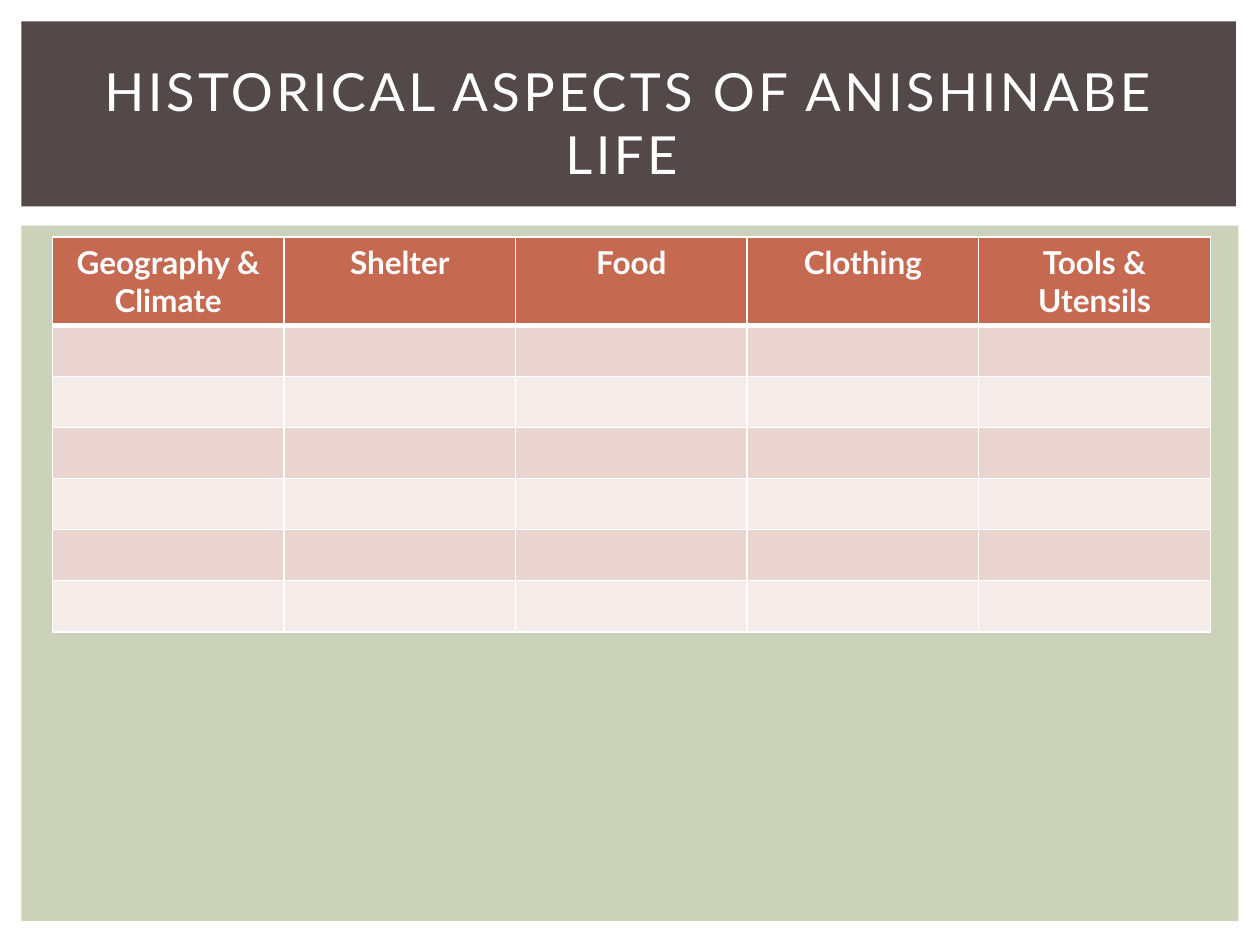
from lxml import etree
from pptx import Presentation
from pptx.dml.color import RGBColor
from pptx.enum.shapes import MSO_SHAPE
from pptx.enum.text import MSO_ANCHOR, PP_ALIGN
from pptx.oxml.ns import qn
from pptx.util import Pt

RECT = MSO_SHAPE.RECTANGLE
MIDDLE = MSO_ANCHOR.MIDDLE
CENTER = PP_ALIGN.CENTER

WHITE = RGBColor(0xFF, 0xFF, 0xFF)
BROWN = RGBColor(0x53, 0x49, 0x49)
SAGE = RGBColor(0xCC, 0xD1, 0xB9)
RUST = RGBColor(0xC6, 0x69, 0x51)
BANDS = (RGBColor(0xEA, 0xD4, 0xD0), RGBColor(0xF5, 0xEB, 0xE9))

FONT = "Lato"
TITLE = "HISTORICAL ASPECTS OF ANISHINABE LIFE "
HEADS = ("Geography & Climate", "Shelter", "Food", "Clothing",
         "Tools & Utensils")
ROWS = 6
HEAD_H, ROW_H = 50, 29.2


def add_panel(slide, box, color):
    panel = slide.shapes.add_shape(RECT, *map(Pt, box))
    panel.shadow.inherit = False
    panel.fill.solid()
    panel.fill.fore_color.rgb = color
    panel.line.fill.background()


def add_text(para, text, size):
    para.alignment = CENTER
    run = para.add_run()
    run.text = text
    run.font.name = FONT
    run.font.size = Pt(size)
    run.font.color.rgb = WHITE
    return run


def add_title(slide, box):
    title = slide.shapes.title
    title.left, title.top, title.width, title.height = map(Pt, box)
    frame = title.text_frame
    frame.word_wrap = True
    frame.vertical_anchor = MIDDLE
    run = add_text(frame.paragraphs[0], TITLE, 30)
    # Letter spacing, in hundredths of a point
    run.font._element.set("spc", "200")
    # Bring the title in front of its panel
    title.element.getparent().append(title.element)


def set_edges(cell, base):
    """Draw white borders; base is the width of the bottom one."""
    props = cell._tc.get_or_add_tcPr()
    for i, (side, width) in enumerate(zip("LRTB", (1, 1, 1, base))):
        line = etree.Element(qn(f"a:ln{side}"), w=str(Pt(width)))
        fill = etree.SubElement(line, qn("a:solidFill"))
        etree.SubElement(fill, qn("a:srgbClr"), val=str(WHITE))
        props.insert(i, line)


def add_grid(slide, box):
    grid = slide.shapes.add_table(ROWS + 1, len(HEADS), *map(Pt, box)).table
    for r, row in enumerate(grid.rows):
        row.height = Pt(ROW_H if r else HEAD_H)
        for c, cell in enumerate(row.cells):
            cell.fill.solid()
            cell.fill.fore_color.rgb = BANDS[(r - 1) % 2] if r else RUST
            set_edges(cell, 1 if r else 3)
            if r == 0:
                para = cell.text_frame.paragraphs[0]
                add_text(para, HEADS[c], 18).font.bold = True


def main():
    deck = Presentation()
    deck.slide_width, deck.slide_height = Pt(720), Pt(540)
    slide = deck.slides.add_slide(deck.slide_layouts[5])
    # Backdrop panels
    add_panel(slide, (12.2, 128.9, 695.5, 397.4), SAGE)
    add_panel(slide, (12.2, 12.2, 694.1, 105.8), BROWN)
    # Table and heading
    add_grid(slide, (30, 135.4, 661.7, HEAD_H + ROWS * ROW_H))
    add_title(slide, (30, 28.1, 660, 82.8))
    deck.save("out.pptx")


if __name__ == "__main__":
    main()
